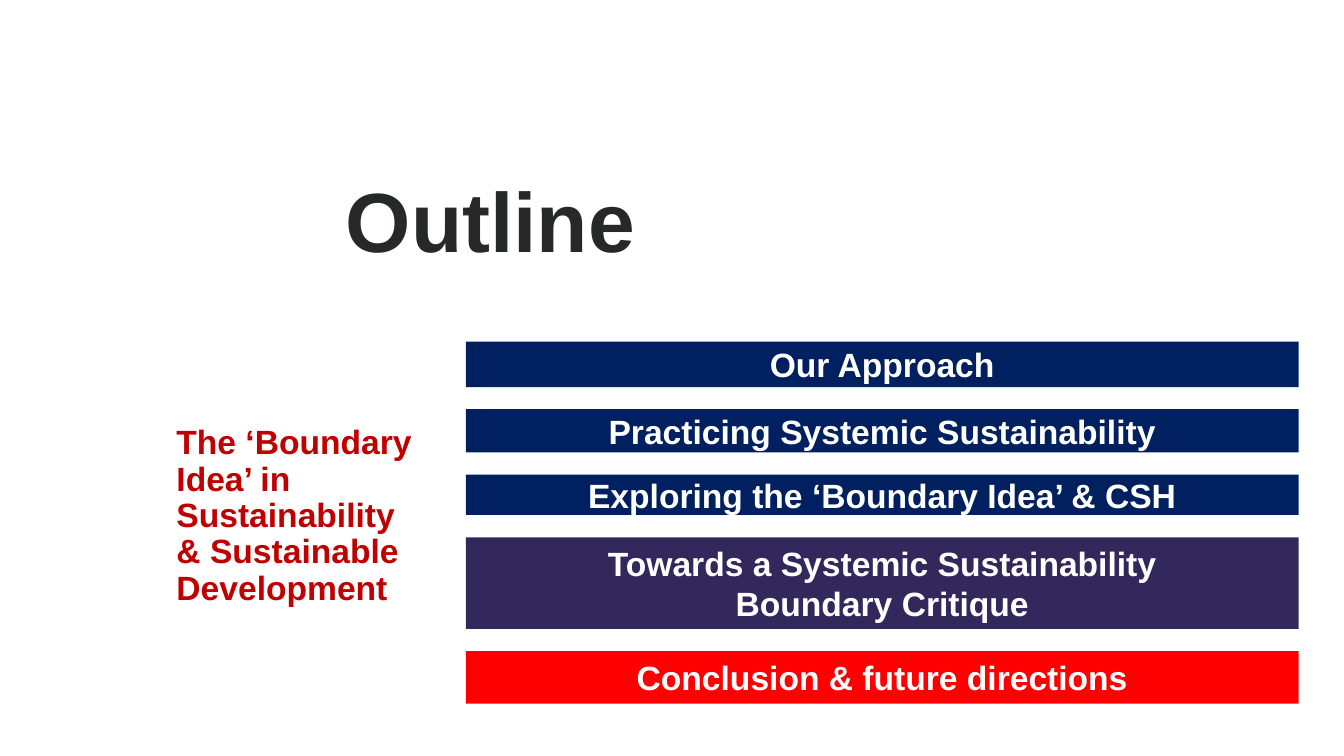
from pptx import Presentation
from pptx.dml.color import RGBColor
from pptx.enum.shapes import MSO_SHAPE as Shape
from pptx.enum.text import MSO_ANCHOR as Anchor, PP_ALIGN as Align
from pptx.util import Inches, Pt

DARK = RGBColor(0x27, 0x29, 0x28)
CRIMSON = RGBColor(0xC0, 0x00, 0x00)
NAVY = RGBColor(0x00, 0x20, 0x60)
PURPLE = RGBColor(0x32, 0x28, 0x5B)
RED = RGBColor(0xFF, 0x00, 0x00)
WHITE = RGBColor(0xFF, 0xFF, 0xFF)


def write(shape, text, size=24, color=WHITE, align=Align.LEFT,
          anchor=Anchor.MIDDLE, side=0.1, top=0.05, bottom=0.05, lead=1.0):
    """Fill a shape with bold Arial text, one paragraph per line."""
    frame = shape.text_frame
    frame.word_wrap = True
    frame.vertical_anchor = anchor
    frame.margin_left = frame.margin_right = Inches(side)
    frame.margin_top, frame.margin_bottom = Inches(top), Inches(bottom)
    frame.text = text
    for para in frame.paragraphs:
        para.alignment = align
        para.line_spacing = lead
        para.font.name = "Arial"
        para.font.size = Pt(size)
        para.font.bold = True
        para.font.color.rgb = color


prs = Presentation()
prs.slide_width, prs.slide_height = Inches(13.33), Inches(7.5)
slide = prs.slides.add_slide(prs.slide_layouts[6])
shapes = slide.shapes

title = shapes.add_textbox(Inches(3.12), Inches(1.77), Inches(8.26), Inches(0.91))
write(title, "Outline", size=60, color=DARK, anchor=Anchor.BOTTOM,
      side=0.31, top=0, bottom=0, lead=0.9)

theme = shapes.add_textbox(Inches(1.44), Inches(2.89), Inches(3.01), Inches(4.44))
write(theme, "The ‘Boundary Idea’ in Sustainability & Sustainable Development",
      color=CRIMSON, side=0.31, top=0.08, lead=0.9)

# Agenda bars, stacked with equal gaps
bars = [
    ("Our Approach", 0.45, NAVY),
    ("Practicing Systemic Sustainability", 0.43, NAVY),
    ("Exploring the ‘Boundary Idea’ & CSH", 0.4, NAVY),
    ("Towards a Systemic Sustainability\nBoundary Critique", 0.91, PURPLE),
    ("Conclusion & future directions", 0.52, RED),
]
gap = 0.22
y = 3.39
for text, height, fill in bars:
    bar = shapes.add_shape(Shape.RECTANGLE, Inches(4.62), Inches(y),
                           Inches(8.26), Inches(height))
    bar.shadow.inherit = False
    bar.fill.solid()
    bar.fill.fore_color.rgb = fill
    bar.line.fill.background()
    write(bar, text, align=Align.CENTER)
    y += height + gap

prs.save("out.pptx")
